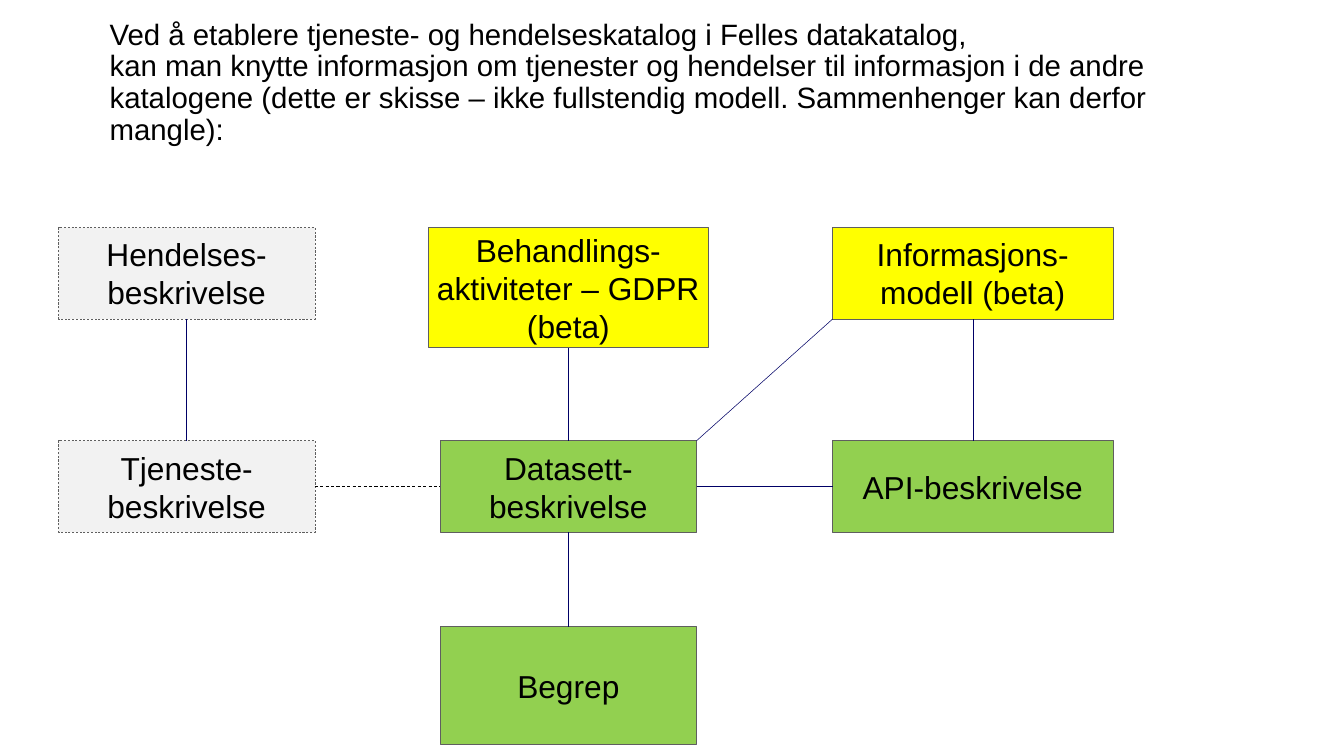
from pptx import Presentation
from pptx.dml.color import RGBColor
from pptx.enum.dml import MSO_LINE
from pptx.enum.shapes import MSO_CONNECTOR, MSO_SHAPE
from pptx.enum.text import MSO_ANCHOR, MSO_AUTO_SIZE, PP_ALIGN
from pptx.oxml.ns import qn
from pptx.util import Inches, Pt

RECTANGLE = MSO_SHAPE.RECTANGLE
STRAIGHT = MSO_CONNECTOR.STRAIGHT
DASH = MSO_LINE.DASH
MIDDLE, BOTTOM = MSO_ANCHOR.MIDDLE, MSO_ANCHOR.BOTTOM
CENTER, LEFT = PP_ALIGN.CENTER, PP_ALIGN.LEFT
NO_FIT = MSO_AUTO_SIZE.NONE
TOP_SITE, LEFT_SITE, BOTTOM_SITE, RIGHT_SITE = range(4)

COLORS = {
    "planned": "F2F2F2",
    "beta": "FFFF00",
    "live": "92D050",
    "border": "5F5F5F",
    "link": "000066",
    "black": "000000",
}
FONT = "Arial"
COLUMN_CENTERS = [2.47, 7.52, 12.87]
ROW_TOPS = [3.01, 5.83, 8.29]
NARROW, WIDE = 3.39, 3.71
HEIGHT = 1.21

TITLE = (
    "Ved å etablere tjeneste- og hendelseskatalog i Felles datakatalog, \v"
    "kan man knytte informasjon om tjenester og hendelser til informasjon i de andre "
    "katalogene (dette er skisse – ikke fullstendig modell. "
    "Sammenhenger kan derfor mangle):"
)

BOXES = {
    "event": ("Hendelses-beskrivelse", 0, 0, NARROW, HEIGHT, "planned"),
    "service": ("Tjeneste-beskrivelse", 0, 1, NARROW, HEIGHT, "planned"),
    "processing": ("Behandlings-aktiviteter – GDPR\n(beta)", 1, 0, WIDE, 1.59, "beta"),
    "dataset": ("Datasett-beskrivelse", 1, 1, NARROW, HEIGHT, "live"),
    "concept": ("Begrep", 1, 2, NARROW, 1.55, "live"),
    "model": ("Informasjons-modell (beta)", 2, 0, WIDE, HEIGHT, "beta"),
    "api": ("API-beskrivelse", 2, 1, WIDE, HEIGHT, "live"),
}

LINKS = [
    ("event", BOTTOM_SITE, "service", TOP_SITE),
    ("dataset", RIGHT_SITE, "api", LEFT_SITE),
    ("dataset", TOP_SITE, "processing", BOTTOM_SITE),
    ("dataset", BOTTOM_SITE, "concept", TOP_SITE),
    ("model", BOTTOM_SITE, "api", TOP_SITE),
]


def color(name):
    return RGBColor.from_string(COLORS[name])


def format_text(frame, size, alignment):
    for para in frame.paragraphs:
        para.alignment = alignment
        for span in para.runs:
            span.font.name = FONT
            span.font.size = Pt(size)
            span.font.color.rgb = color("black")


def format_line(line, name, width, dashed):
    line.color.rgb = color(name)
    line.width = Pt(width)
    if dashed:
        line.dash_style = DASH


def set_title(page):
    title = page.shapes.title
    title.left, title.top = Inches(1.45), Inches(1.18)
    title.width, title.height = Inches(14.01), Inches(0.76)
    frame = title.text_frame
    frame.text = TITLE
    frame.word_wrap = True
    frame.auto_size = NO_FIT
    frame.vertical_anchor = BOTTOM
    frame.margin_left = frame.margin_right = 0
    frame.margin_top = frame.margin_bottom = 0
    format_text(frame, 28, LEFT)
    frame.paragraphs[0].line_spacing = 0.9


def add_box(page, text, column, row, width, height, status):
    left = COLUMN_CENTERS[column] - width / 2
    box = page.shapes.add_shape(
        RECTANGLE, Inches(left), Inches(ROW_TOPS[row]), Inches(width), Inches(height)
    )
    box.shadow.inherit = False
    box.fill.solid()
    box.fill.fore_color.rgb = color(status)
    format_line(box.line, "border", 0.5, status == "planned")
    frame = box.text_frame
    frame.text = text
    frame.word_wrap = True
    frame.vertical_anchor = MIDDLE
    format_text(frame, 30.2, CENTER)
    return box


def add_line(page, start=(0, 0), end=(0, 0), name="link", width=0.5, dashed=False):
    link = page.shapes.add_connector(STRAIGHT, *start, *end)
    format_line(link.line, name, width, dashed)
    properties = link._element.spPr
    properties.append(properties.makeelement(qn("a:effectLst"), {}))
    return link


def connect(page, start, start_site, end, end_site, **style):
    link = add_line(page, **style)
    link.begin_connect(start, start_site)
    link.end_connect(end, end_site)


def main():
    deck = Presentation()
    deck.slide_width, deck.slide_height = Inches(17.78), Inches(10)
    page = deck.slides.add_slide(deck.slide_layouts[5])
    set_title(page)
    boxes = {key: add_box(page, *details) for key, details in BOXES.items()}
    for start, start_site, end, end_site in LINKS:
        connect(page, boxes[start], start_site, boxes[end], end_site)
    dataset, model = boxes["dataset"], boxes["model"]
    connect(page, boxes["service"], RIGHT_SITE, dataset, LEFT_SITE,
            name="black", width=0.75, dashed=True)
    add_line(page, (dataset.left + dataset.width, dataset.top),
             (model.left, model.top + model.height))
    deck.save("out.pptx")


if __name__ == "__main__":
    main()
